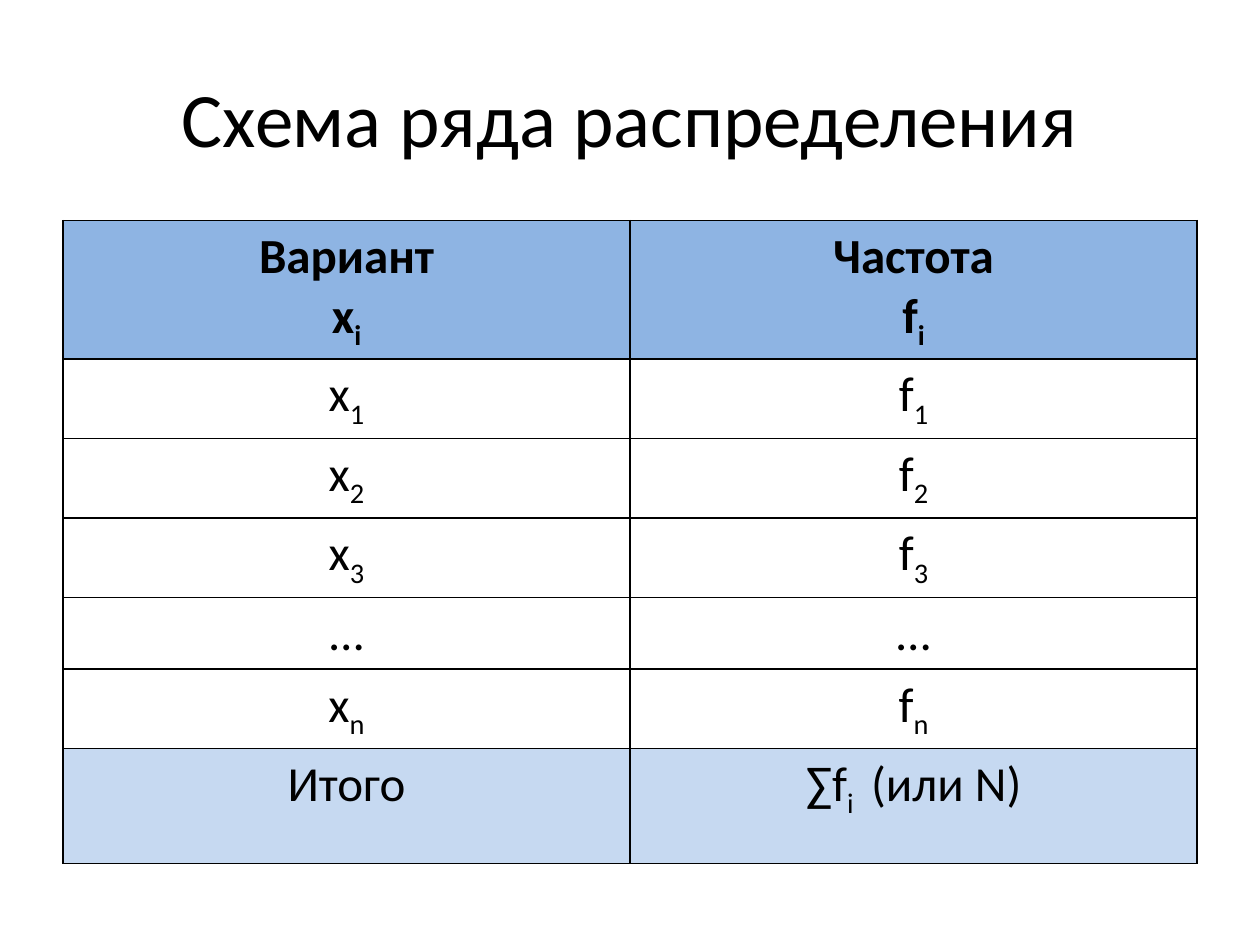
import pptx
import pptx.dml.color
import pptx.enum.text
import pptx.oxml.ns
import pptx.util
from lxml import etree

Inches = pptx.util.Inches
Pt = pptx.util.Pt
CENTER = pptx.enum.text.PP_ALIGN.CENTER
MIDDLE = pptx.enum.text.MSO_ANCHOR.MIDDLE

TITLE = "Схема ряда распределения"
HEADER, BODY, TOTAL = "8EB4E3", "FFFFFF", "C6D9F1"
BLACK = "000000"

# Each cell is a list of paragraphs; a paragraph alternates normal and subscript text.
ROWS = [
    (0.98, HEADER, [[["Вариант"], ["х", "i"]], [["Частота"], ["f", "i"]]]),
    (0.54, BODY, [[["x", "1"]], [["f", "1"]]]),
    (0.54, BODY, [[["x", "2"]], [["f", "2"]]]),
    (0.54, BODY, [[["x", "3"]], [["f", "3"]]]),
    (0.54, BODY, [[["…"]], [["…"]]]),
    (0.54, BODY, [[["x", "n"]], [["f", "n"]]]),
    (0.91, TOTAL, [[["Итого"]], [["∑f", "i ", " (или N)"]]]),
]
LEFT, WIDTH = 0.5, 9
TABLE_TOP = 1.75


def color(value):
    return pptx.dml.color.RGBColor.from_string(value)


def write(frame, paragraphs, size, bold=False):
    for number, parts in enumerate(paragraphs):
        para = frame.add_paragraph() if number else frame.paragraphs[0]
        para.alignment = CENTER
        for index, text in enumerate(parts):
            span = para.add_run()
            span.text = text
            for name, value in {"name": "Calibri", "size": Pt(size), "bold": bold}.items():
                setattr(span.font, name, value)
            span.font.color.rgb = color(BLACK)
            if index % 2:
                span.font._element.set("baseline", "-25000")


def add_borders(cell):
    properties = cell._tc.get_or_add_tcPr()
    for side in ("lnL", "lnR", "lnT", "lnB"):
        line = etree.SubElement(properties, pptx.oxml.ns.qn("a:" + side), w=str(Pt(1)))
        fill = etree.SubElement(line, pptx.oxml.ns.qn("a:solidFill"))
        etree.SubElement(fill, pptx.oxml.ns.qn("a:srgbClr"), val=BLACK)


def add_title(page):
    box = page.shapes.add_textbox(Inches(LEFT), Inches(0.3), Inches(WIDTH), Inches(1.25))
    box.text_frame.word_wrap = True
    box.text_frame.vertical_anchor = MIDDLE
    write(box.text_frame, [[TITLE]], 44)


def add_distribution(page):
    columns = len(ROWS[0][2])
    height = sum(row[0] for row in ROWS)
    table = page.shapes.add_table(
        len(ROWS), columns, Inches(LEFT), Inches(TABLE_TOP), Inches(WIDTH), Inches(height)
    ).table
    table.first_row = table.horz_banding = False
    for column in table.columns:
        column.width = Inches(WIDTH / columns)
    for r, (row_height, fill, cells) in enumerate(ROWS):
        table.rows[r].height = Inches(row_height)
        for c, paragraphs in enumerate(cells):
            cell = table.cell(r, c)
            add_borders(cell)
            cell.fill.solid()
            cell.fill.fore_color.rgb = color(fill)
            write(cell.text_frame, paragraphs, 28, bold=fill == HEADER)


def main():
    deck = pptx.Presentation()
    deck.slide_width, deck.slide_height = Inches(10), Inches(7.5)
    page = deck.slides.add_slide(deck.slide_layouts[6])
    add_title(page)
    add_distribution(page)
    deck.save("out.pptx")


if __name__ == "__main__":
    main()
